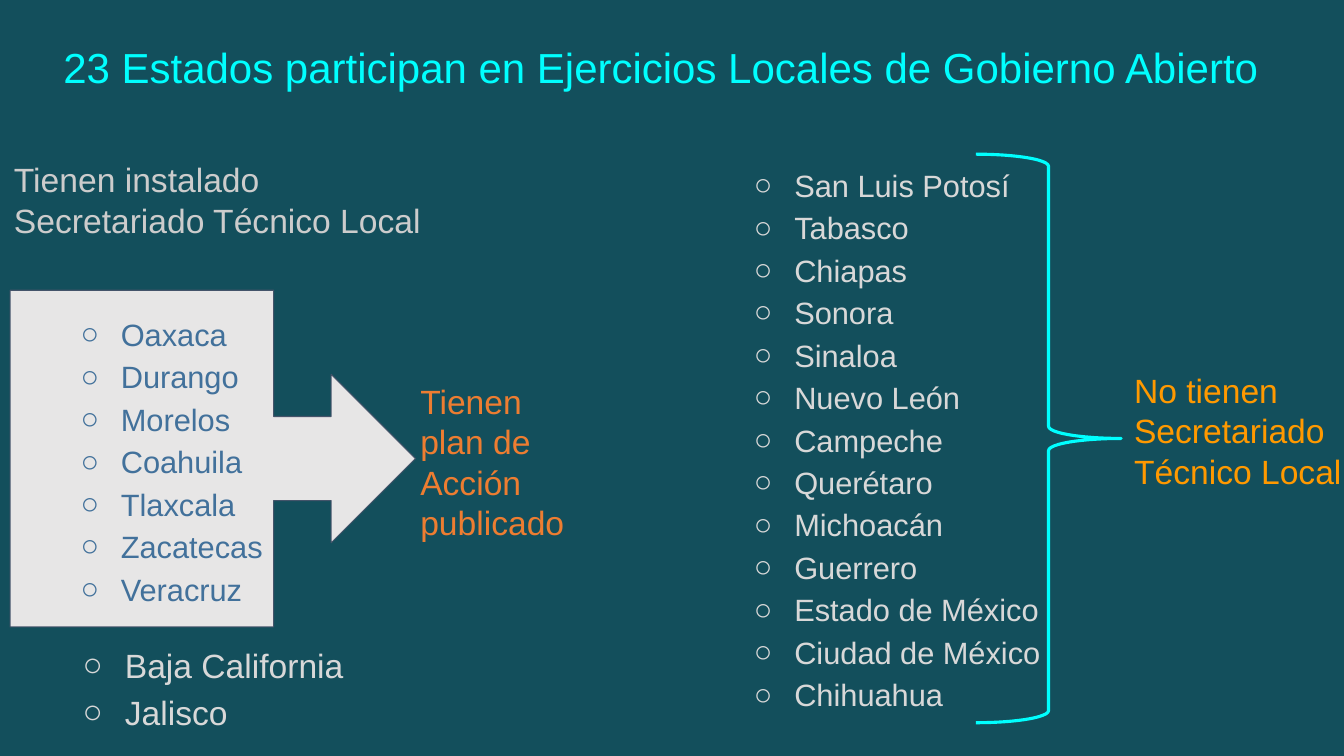
from lxml import etree
from pptx import Presentation, util as u
from pptx.dml.color import RGBColor
from pptx.enum import shapes, text
from pptx.oxml.ns import qn

PX = 9144
TEAL = RGBColor(0x13, 0x4F, 0x5C)
CYAN = RGBColor(0x00, 0xFF, 0xFF)
SILVER = RGBColor(0xCC, 0xCC, 0xCC)
PALE = RGBColor(0xD8, 0xD8, 0xD8)
LIGHT = RGBColor(0xE7, 0xE6, 0xE6)
SLATE = RGBColor(0x44, 0x54, 0x6A)
BLUE = RGBColor(0x42, 0x71, 0x9B)
ORANGE = RGBColor(0xED, 0x7D, 0x31)
AMBER = RGBColor(0xFF, 0x99, 0x00)

WITH_PLAN = ["Oaxaca", "Durango", "Morelos", "Coahuila", "Tlaxcala",
             "Zacatecas", "Veracruz"]
WITHOUT_PLAN = ["Baja California", "Jalisco"]
WITHOUT_SECRETARIAT = [
    "San Luis Potosí", "Tabasco", "Chiapas", "Sonora", "Sinaloa",
    "Nuevo León", "Campeche", "Querétaro", "Michoacán", "Guerrero",
    "Estado de México", "Ciudad de México", "Chihuahua"]


def emu(*lengths):
    return [u.Emu(n * PX) for n in lengths]


def add_bullet(p, color, hang):
    p.level = 1
    p.alignment = text.PP_ALIGN.JUSTIFY
    p.line_spacing = 1.15
    pPr = p._p.get_or_add_pPr()
    pPr.set("marL", str(100 * PX))
    pPr.set("indent", str(-hang * PX))
    clr = etree.SubElement(pPr, qn("a:buClr"))
    etree.SubElement(clr, qn("a:srgbClr")).set("val", str(color))
    etree.SubElement(pPr, qn("a:buFont")).set("typeface", "Arial")
    etree.SubElement(pPr, qn("a:buChar")).set("char", "○")


def write(sp, lines, size=24, color=PALE, anchor=text.MSO_ANCHOR.TOP, hang=0):
    tf = sp.text_frame
    tf.word_wrap = True
    tf.vertical_anchor = anchor
    tf.margin_left, tf.margin_top, tf.margin_right, tf.margin_bottom = emu(10, 10, 10, 10)
    for i, line in enumerate(lines):
        p = tf.paragraphs[0] if i == 0 else tf.add_paragraph()
        p.alignment = text.PP_ALIGN.LEFT
        if hang:
            add_bullet(p, color, hang)
        r = p.add_run()
        r.text = line
        r.font.name = "Arial"
        r.font.size = u.Pt(size)
        r.font.color.rgb = color


def add_text(s, box, lines, **fmt):
    write(s.shapes.add_textbox(*emu(*box)), lines, **fmt)


def add_outline(s, kind, box, color, width):
    sp = s.shapes.add_shape(kind, *emu(*box))
    sp.shadow.inherit = False
    sp.line.color.rgb = color
    sp.line.width = u.Pt(width)
    return sp


def add_installed(s, x, y):
    middle = text.MSO_ANCHOR.MIDDLE
    add_text(s, (x, y, 428, 110),
             ["Tienen instalado", "Secretariado Técnico Local"], color=SILVER)
    add_text(s, (x + 10, y + 477, 488, 110), WITHOUT_PLAN, anchor=middle, hang=42)
    sp = add_outline(s, shapes.MSO_SHAPE.RIGHT_ARROW_CALLOUT,
                     (x + 6, y + 140, 402, 334), SLATE, 0.75)
    for i, value in enumerate((0.25, 0.25, 0.25, 0.65)):
        sp.adjustments[i] = value
    sp.fill.solid()
    sp.fill.fore_color.rgb = LIGHT
    write(sp, WITH_PLAN, size=22, color=BLUE, anchor=middle, hang=40)
    add_text(s, (x + 403, y + 220, 181, 304),
             ["Tienen plan de Acción publicado"], color=ORANGE)


def add_not_installed(s, x, y):
    add_text(s, (x, y, 467, 631), WITHOUT_SECRETARIAT, size=22,
             anchor=text.MSO_ANCHOR.MIDDLE, hang=40)
    sp = add_outline(s, shapes.MSO_SHAPE.RIGHT_BRACE,
                     (x + 290, y + 35, 144, 564), CYAN, 2.25)
    sp.fill.background()
    add_text(s, (x + 437, y + 239, 250, 163),
             ["No tienen Secretariado Técnico Local"], color=AMBER)


def main():
    prs = Presentation()
    prs.slide_width, prs.slide_height = emu(1333, 750)
    s = prs.slides.add_slide(prs.slide_layouts[6])
    s.background.fill.solid()
    s.background.fill.fore_color.rgb = TEAL
    add_text(s, (53, 31, 1235, 93),
             ["23 Estados participan en Ejercicios Locales de Gobierno Abierto"],
             size=30, color=CYAN)
    add_installed(s, 4, 148)
    add_not_installed(s, 678, 118)
    prs.save("out.pptx")


if __name__ == "__main__":
    main()
